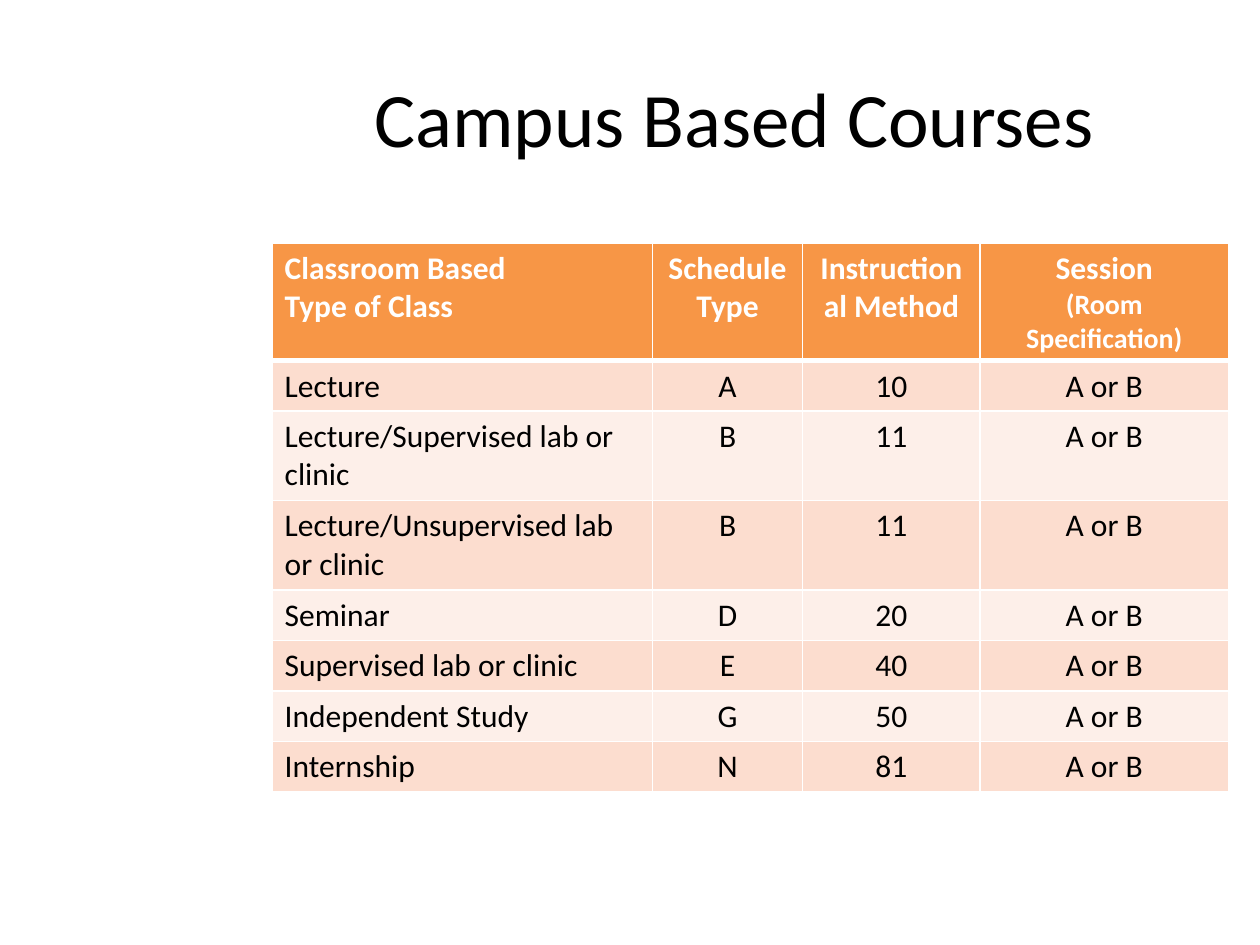
from dataclasses import dataclass

from lxml.etree import SubElement
from pptx import Presentation
from pptx.dml.color import RGBColor
from pptx.enum.text import MSO_ANCHOR, PP_ALIGN
from pptx.oxml.ns import qn
from pptx.util import Inches, Pt

BLACK = RGBColor(0x00, 0x00, 0x00)
WHITE = RGBColor(0xFF, 0xFF, 0xFF)
ORANGE = RGBColor(0xF7, 0x96, 0x46)
PEACH = RGBColor(0xFC, 0xDD, 0xCF)
PALE_PEACH = RGBColor(0xFD, 0xEF, 0xE9)
FONT = "Calibri"
THIN, THICK = Pt(1), Pt(3)
COLUMN_WIDTHS = (3.02, 1.19, 1.41, 1.97)
HEADER_HEIGHT, LINE_HEIGHT, TWO_LINE_HEIGHT = 0.93, 0.4, 0.71


@dataclass(frozen=True)
class Course:
    kind: str
    schedule: str
    method: str
    height: float = LINE_HEIGHT
    session: str = "A or B"

    def texts(self) -> tuple[str, ...]:
        return self.kind, self.schedule, self.method, self.session


HEADINGS = (
    "Classroom Based\nType of Class",
    "Schedule Type",
    "Instructional Method",
    "Session",
)
COURSES = (
    Course("Lecture", "A", "10"),
    Course("Lecture/Supervised lab or clinic", "B", "11", TWO_LINE_HEIGHT),
    Course("Lecture/Unsupervised lab or clinic", "B", "11", TWO_LINE_HEIGHT),
    Course("Seminar", "D", "20"),
    Course("Supervised lab or clinic", "E", "40"),
    Course("Independent Study", "G", "50"),
    Course("Internship", "N", "81"),
)


def style_paragraph(paragraph, size: int, color: RGBColor, bold: bool, align: PP_ALIGN) -> None:
    paragraph.alignment = align
    paragraph.font.name = FONT
    paragraph.font.size = Pt(size)
    paragraph.font.bold = bold
    paragraph.font.color.rgb = color


def draw_borders(cell, top: int, bottom: int) -> None:
    properties = cell._tc.get_or_add_tcPr()
    for side, width in (("L", THIN), ("R", THIN), ("T", top), ("B", bottom)):
        line = SubElement(properties, qn(f"a:ln{side}"), w=str(width))
        fill = SubElement(line, qn("a:solidFill"))
        SubElement(fill, qn("a:srgbClr"), val=str(WHITE))


def fill_row(table, row: int, texts: tuple[str, ...], fill: RGBColor) -> None:
    heading = row == 0
    for column, text in enumerate(texts):
        cell = table.cell(row, column)
        draw_borders(cell, THICK if row == 1 else THIN, THICK if heading else THIN)
        cell.fill.solid()
        cell.fill.fore_color.rgb = fill
        cell.text = text
        align = PP_ALIGN.CENTER if column else PP_ALIGN.LEFT
        for paragraph in cell.text_frame.paragraphs:
            style_paragraph(paragraph, 18, WHITE if heading else BLACK, heading, align)


def add_title(slide, text: str) -> None:
    title = slide.shapes.add_textbox(Inches(2.16), Inches(0.3), Inches(7.34), Inches(1.25))
    frame = title.text_frame
    frame.word_wrap = True
    frame.vertical_anchor = MSO_ANCHOR.MIDDLE
    frame.text = text
    style_paragraph(frame.paragraphs[0], 44, BLACK, False, PP_ALIGN.CENTER)


def add_course_table(slide) -> None:
    heights = (HEADER_HEIGHT, *(course.height for course in COURSES))
    table = slide.shapes.add_table(
        len(heights), len(COLUMN_WIDTHS), Inches(2.16), Inches(1.93),
        Inches(sum(COLUMN_WIDTHS)), Inches(sum(heights)),
    ).table
    for column, width in zip(table.columns, COLUMN_WIDTHS):
        column.width = Inches(width)
    for row, height in zip(table.rows, heights):
        row.height = Inches(height)

    fill_row(table, 0, HEADINGS, ORANGE)
    for row, course in enumerate(COURSES, start=1):
        fill_row(table, row, course.texts(), PEACH if row % 2 else PALE_PEACH)

    session = table.cell(0, 3).text_frame.paragraphs[0]
    session.add_line_break()
    room = session.add_run()
    room.text = "(Room Specification)"
    room.font.size = Pt(16)


def main() -> None:
    deck = Presentation()
    deck.slide_width, deck.slide_height = Inches(10), Inches(7.5)
    slide = deck.slides.add_slide(deck.slide_layouts[6])
    add_title(slide, "Campus Based Courses")
    add_course_table(slide)
    deck.save("out.pptx")


if __name__ == "__main__":
    main()
